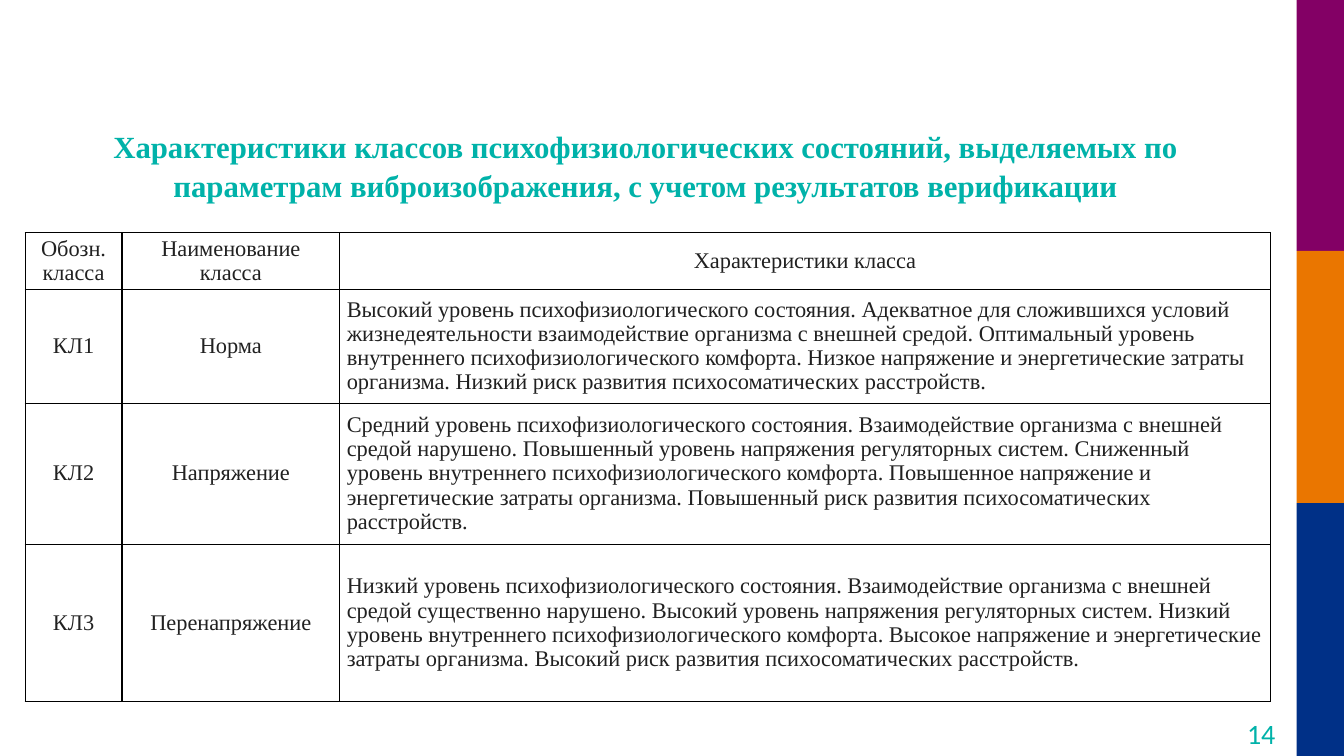
from dataclasses import dataclass

from lxml import etree
from pptx import Presentation
from pptx.dml.color import RGBColor
from pptx.enum.shapes import MSO_SHAPE
from pptx.enum.text import MSO_ANCHOR, MSO_AUTO_SIZE, PP_ALIGN
from pptx.oxml.ns import qn
from pptx.util import Inches, Pt

RECT = MSO_SHAPE.RECTANGLE
TOP, MIDDLE = MSO_ANCHOR.TOP, MSO_ANCHOR.MIDDLE
LEFT, CENTER, RIGHT = PP_ALIGN.LEFT, PP_ALIGN.CENTER, PP_ALIGN.RIGHT

PURPLE = RGBColor(0x83, 0x00, 0x65)
ORANGE = RGBColor(0xEA, 0x76, 0x00)
NAVY = RGBColor(0x00, 0x30, 0x87)
TEAL = RGBColor(0x00, 0xB2, 0xA9)
INK = RGBColor(0x21, 0x21, 0x21)
WHITE = RGBColor(0xFF, 0xFF, 0xFF)
BLACK = RGBColor(0x00, 0x00, 0x00)
SERIF, SANS = "Times New Roman", "Calibri"


@dataclass
class Band:
    top: float
    height: float
    color: RGBColor


@dataclass
class ClassRow:
    height: float
    code: str
    name: str
    traits: str


BANDS = [
    Band(0, 2.49, PURPLE),
    Band(2.49, 2.5, ORANGE),
    Band(4.99, 2.51, NAVY),
]
COL_WIDTHS = [0.96, 2.16, 9.23]
ROWS = [
    ClassRow(0.56, "Обозн.\nкласса", "Наименование класса", "Характеристики класса"),
    ClassRow(1.13, "КЛ1", "Норма",
             "Высокий уровень психофизиологического состояния. Адекватное для "
             "сложившихся условий жизнедеятельности взаимодействие организма с "
             "внешней средой. Оптимальный уровень внутреннего "
             "психофизиологического комфорта. Низкое напряжение и энергетические "
             "затраты организма. Низкий риск развития психосоматических "
             "расстройств."),
    ClassRow(1.4, "КЛ2", "Напряжение",
             "Средний уровень психофизиологического состояния. Взаимодействие "
             "организма с внешней средой нарушено. Повышенный уровень напряжения "
             "регуляторных систем. Сниженный уровень внутреннего "
             "психофизиологического комфорта. Повышенное напряжение и "
             "энергетические затраты организма. Повышенный риск развития "
             "психосоматических расстройств."),
    ClassRow(1.56, "КЛ3", "Перенапряжение",
             "Низкий уровень психофизиологического состояния. Взаимодействие "
             "организма с внешней средой существенно нарушено. Высокий уровень "
             "напряжения регуляторных систем. Низкий уровень внутреннего "
             "психофизиологического комфорта. Высокое напряжение и энергетические "
             "затраты организма. Высокий риск развития психосоматических "
             "расстройств."),
]


def format_text(tf, align: PP_ALIGN, font: str, size: float, color: RGBColor,
                bold: bool = False, spacing: float = 1.0) -> None:
    for p in tf.paragraphs:
        p.alignment = align
        p.line_spacing = spacing
        for r in p.runs:
            r.font.name = font
            r.font.size = Pt(size)
            r.font.bold = bold
            r.font.color.rgb = color


def add_band(slide, band: Band) -> None:
    sp = slide.shapes.add_shape(RECT, Inches(12.86), Inches(band.top),
                                Inches(0.48), Inches(band.height))
    sp.shadow.inherit = False
    sp.fill.solid()
    sp.fill.fore_color.rgb = band.color
    sp.line.fill.background()


def add_borders(cell) -> None:
    tc_pr = cell._tc.get_or_add_tcPr()
    for i, side in enumerate(("lnL", "lnR", "lnT", "lnB")):
        ln = etree.Element(qn(f"a:{side}"), w=str(Pt(1)))
        fill = etree.SubElement(ln, qn("a:solidFill"))
        etree.SubElement(fill, qn("a:srgbClr"), val=str(BLACK))
        tc_pr.insert(i, ln)


def fill_cell(cell, text: str, align: PP_ALIGN) -> None:
    cell.text_frame.text = text
    cell.vertical_anchor = MIDDLE
    cell.margin_left = cell.margin_right = Inches(0.07)
    cell.margin_top = cell.margin_bottom = 0
    cell.fill.solid()
    cell.fill.fore_color.rgb = WHITE
    format_text(cell.text_frame, align, SERIF, 16, INK, spacing=0.97)
    add_borders(cell)


def add_class_table(slide) -> None:
    frame = slide.shapes.add_table(
        len(ROWS), len(COL_WIDTHS), Inches(0.25), Inches(2.31),
        Inches(sum(COL_WIDTHS)), Inches(sum(row.height for row in ROWS)))
    table = frame.table
    for col, width in zip(table.columns, COL_WIDTHS):
        col.width = Inches(width)
    for i, row in enumerate(ROWS):
        table.rows[i].height = Inches(row.height)
        for j, text in enumerate((row.code, row.name, row.traits)):
            is_traits = i > 0 and j == 2
            fill_cell(table.cell(i, j), text, LEFT if is_traits else CENTER)


def add_title(slide) -> None:
    sp = slide.shapes.title
    sp.left, sp.top = Inches(0.41), Inches(1.2)
    sp.width, sp.height = Inches(11.98), Inches(0.84)
    tf = sp.text_frame
    tf.text = ("Характеристики классов психофизиологических состояний, "
               "выделяемых по параметрам виброизображения, с учетом "
               "результатов верификации")
    tf.word_wrap = True
    tf.auto_size = MSO_AUTO_SIZE.NONE
    tf.vertical_anchor = TOP
    format_text(tf, CENTER, SERIF, 22, TEAL, bold=True, spacing=1.05)


def add_page_number(slide) -> None:
    sp = slide.shapes.add_textbox(Inches(12.06), Inches(7.14),
                                  Inches(0.59), Inches(0.27))
    tf = sp.text_frame
    tf.text = "14"
    tf.word_wrap = True
    tf.vertical_anchor = MIDDLE
    tf.margin_left = tf.margin_right = tf.margin_top = tf.margin_bottom = 0
    format_text(tf, RIGHT, SANS, 20, TEAL)


def main() -> None:
    prs = Presentation()
    prs.slide_width, prs.slide_height = Inches(13.33), Inches(7.5)
    slide = prs.slides.add_slide(prs.slide_layouts[5])

    # Colour bands on the right edge
    for band in BANDS:
        add_band(slide, band)

    # Page number, table of classes and title
    add_page_number(slide)
    add_class_table(slide)
    add_title(slide)

    prs.save("out.pptx")


if __name__ == "__main__":
    main()
